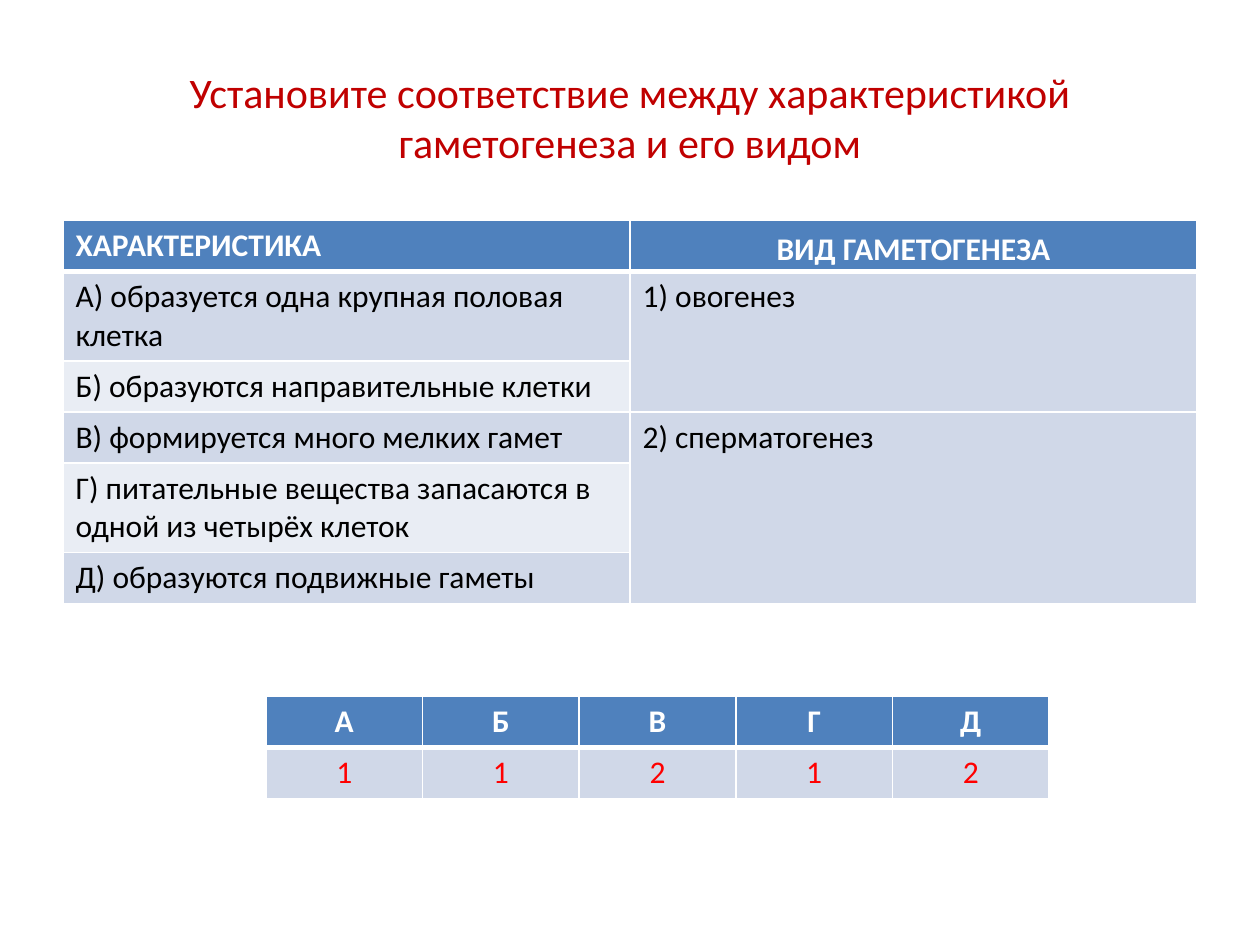
from lxml import etree
from pptx import Presentation
from pptx.dml.color import RGBColor
from pptx.enum.text import MSO_ANCHOR, PP_ALIGN
from pptx.oxml.ns import qn
from pptx.util import Pt

CENTER = PP_ALIGN.CENTER
MIDDLE = MSO_ANCHOR.MIDDLE

WHITE = RGBColor(0xFF, 0xFF, 0xFF)
BLACK = RGBColor(0, 0, 0)
RED = RGBColor(0xFF, 0, 0)
DARK_RED = RGBColor(0xC0, 0, 0)
BLUE = RGBColor(0x4F, 0x81, 0xBD)
BAND_DARK = RGBColor(0xD0, 0xD8, 0xE8)
BAND_LIGHT = RGBColor(0xE9, 0xED, 0xF4)

ROW, TALL_ROW = 29.2, 51
THIN, THICK = 1, 3


class SlideBuilder:
    font = "Calibri"

    def __init__(self, page):
        self.page = page

    def add_text(self, frame, text, size, color, bold=False, **para_format):
        para = frame.paragraphs[0]
        for name, value in para_format.items():
            setattr(para, name, value)
        span = para.add_run()
        span.text = text
        span.font.color.rgb = color
        for name, value in {"name": self.font, "size": Pt(size), "bold": bold}.items():
            setattr(span.font, name, value)

    def title(self, text, left, top, width, height):
        box = self.page.shapes.add_textbox(Pt(left), Pt(top), Pt(width), Pt(height))
        frame = box.text_frame
        frame.word_wrap = True
        frame.vertical_anchor = MIDDLE
        self.add_text(frame, text, 24, DARK_RED, alignment=CENTER)

    def borders(self, cell, row):
        widths = {
            "a:lnL": THIN,
            "a:lnR": THIN,
            "a:lnT": THICK if row == 1 else THIN,
            "a:lnB": THICK if row == 0 else THIN,
        }
        properties = cell._tc.get_or_add_tcPr()
        for tag, width in widths.items():
            line = etree.SubElement(properties, qn(tag), w=str(Pt(width)))
            fill = etree.SubElement(line, qn("a:solidFill"))
            etree.SubElement(fill, qn("a:srgbClr"), val=str(WHITE))

    def table(self, left, top, width, heights, columns):
        table = self.page.shapes.add_table(
            len(heights), columns, Pt(left), Pt(top), Pt(width), Pt(sum(heights))
        ).table
        for column in table.columns:
            column.width = Pt(width / columns)
        for row, height in zip(table.rows, heights):
            row.height = Pt(height)
        return table

    def cell(self, table, row, column, text, fill, color, **para_format):
        cell = table.cell(row, column)
        self.borders(cell, row)
        cell.fill.solid()
        cell.fill.fore_color.rgb = fill
        if text:
            self.add_text(cell.text_frame, text, 18, color, row == 0, **para_format)
        return cell


def main():
    deck = Presentation()
    deck.slide_width, deck.slide_height = Pt(720), Pt(540)
    builder = SlideBuilder(deck.slides.add_slide(deck.slide_layouts[6]))

    # Title
    builder.title(
        "Установите соответствие между характеристикой гаметогенеза и его видом",
        36, 21.6, 648, 90,
    )

    # Matching table: characteristics on the left, kinds on the right
    characteristics = [
        "A) образуется одна крупная половая клетка",
        "Б) образуются направительные клетки",
        "B) формируется много мелких гамет",
        "Г) питательные вещества запасаются в одной из четырёх клеток",
        "Д) образуются подвижные гаметы",
    ]
    kinds = {1: "1) овогенез", 3: "2) сперматогенез"}
    heights = [ROW, TALL_ROW, ROW, ROW, TALL_ROW, ROW]
    matching = builder.table(36, 126, 648, heights, 2)

    builder.cell(matching, 0, 0, "ХАРАКТЕРИСТИКА", BLUE, WHITE)
    header = builder.cell(
        matching, 0, 1, "ВИД ГАМЕТОГЕНЕЗА", BLUE, WHITE,
        alignment=CENTER, line_spacing=1.15, space_before=Pt(2.9),
    )
    header.vertical_anchor = MIDDLE
    for side in ("left", "right", "top", "bottom"):
        setattr(header, f"margin_{side}", Pt(2.16))

    for row, text in enumerate(characteristics, 1):
        band = BAND_DARK if row % 2 else BAND_LIGHT
        builder.cell(matching, row, 0, text, band, BLACK)
        builder.cell(matching, row, 1, kinds.get(row), BAND_DARK, BLACK)
    for first, last in ((1, 2), (3, 5)):
        matching.cell(first, 1).merge(matching.cell(last, 1))

    # Answer table
    answers = builder.table(152, 398, 447.5, [ROW, ROW], 5)
    for column, (letter, answer) in enumerate(zip("АБВГД", "11212")):
        builder.cell(answers, 0, column, letter, BLUE, WHITE, alignment=CENTER)
        builder.cell(answers, 1, column, answer, BAND_DARK, RED, alignment=CENTER)

    deck.save("out.pptx")


if __name__ == "__main__":
    main()
